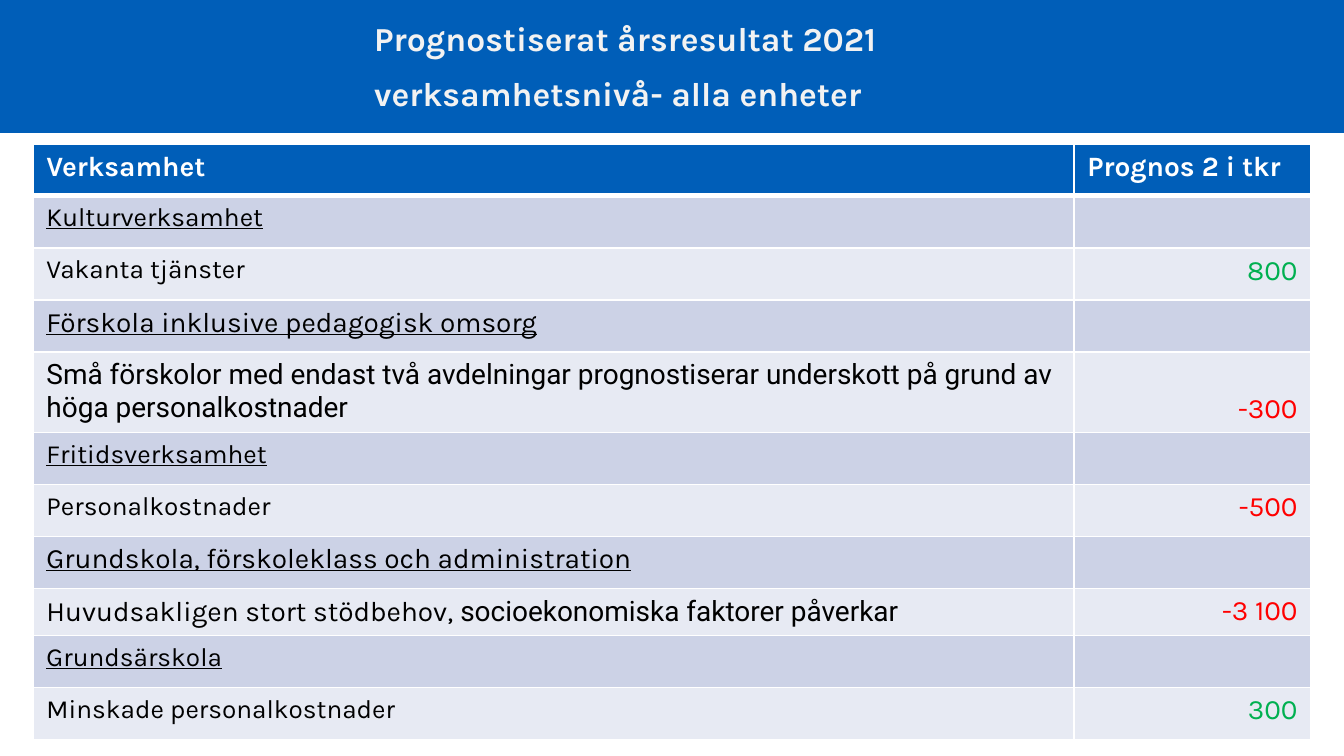
from lxml import etree
from pptx import Presentation
from pptx.dml.color import RGBColor
from pptx.enum.shapes import MSO_SHAPE
from pptx.enum.text import MSO_ANCHOR, PP_ALIGN
from pptx.oxml.ns import qn
from pptx.util import Pt

RECTANGLE = MSO_SHAPE.RECTANGLE
BOTTOM = MSO_ANCHOR.BOTTOM
LEFT, RIGHT = PP_ALIGN.LEFT, PP_ALIGN.RIGHT

EMU_PER_PX = 914400 / 134.4
COLORS = {
    "blue": "005EB8",
    "white": "FFFFFF",
    "title": "F2F2F2",
    "black": "000000",
    "section": "CCD2E6",
    "detail": "E7EAF3",
    "surplus": "00B050",
    "deficit": "FF0000",
}
KARLA, ROBOTO = "Karla", "Roboto"

TITLE = ["Prognostiserat årsresultat 2021", "verksamhetsnivå- alla enheter"]
HEADERS = ["Verksamhet", "Prognos 2 i tkr"]
# Section, its size, detail runs (text, font), detail size, forecast, detail row height
ACTIVITIES = [
    ("Kulturverksamhet", 14, [("Vakanta tjänster", KARLA)], 14, "800", 52),
    ("Förskola inklusive pedagogisk omsorg", 15,
     [("Små förskolor med endast två avdelningar prognostiserar underskott "
       "på grund av höga personalkostnader", ROBOTO)], 15, "-300", 80),
    ("Fritidsverksamhet", 14, [("Personalkostnader", KARLA)], 14, "-500", 52),
    ("Grundskola, förskoleklass och administration", 15,
     [("Huvudsakligen stort stödbehov, ", KARLA),
      ("socioekonomiska faktorer påverkar", ROBOTO)], 15, "-3 100", 47),
    ("Grundsärskola", 14, [("Minskade personalkostnader", KARLA)], 14, "300", 52),
]
COLUMN_WIDTHS = [1041, 237]
ROW_HEIGHT = 52


def px(length):
    return round(length * EMU_PER_PX)


def rgb(color):
    return RGBColor.from_string(COLORS[color])


def style_font(font, size, color, bold=False, underline=False):
    font.size = Pt(size)
    font.bold = bold
    font.underline = underline
    font.color.rgb = rgb(color)


def add_band(slide):
    band = slide.shapes.add_shape(RECTANGLE, 0, 0, px(1344), px(133))
    band.shadow.inherit = False
    band.fill.solid()
    band.fill.fore_color.rgb = rgb("blue")
    band.line.fill.background()


def add_title(slide):
    frame = slide.shapes.add_textbox(px(361), px(16), px(594), px(128)).text_frame
    frame.word_wrap = True
    for index, line in enumerate(TITLE):
        paragraph = frame.add_paragraph() if index else frame.paragraphs[0]
        paragraph.text = line
        paragraph.line_spacing = 0.9
        paragraph.space_before = Pt(10 if index else 0)
        paragraph.font.name = KARLA
        style_font(paragraph.font, 18, "title", bold=True)


def add_borders(cell, top, bottom):
    """Draw white cell edges; top and bottom are widths in points."""
    properties = cell._tc.get_or_add_tcPr()
    for edge, width in (("L", 1), ("R", 1), ("T", top), ("B", bottom)):
        line = etree.SubElement(properties, qn(f"a:ln{edge}"), w=str(Pt(width)))
        fill = etree.SubElement(line, qn("a:solidFill"))
        etree.SubElement(fill, qn("a:srgbClr"), val=COLORS["white"])


def fill_cell(cell, runs, fill, size=15, color="black", bold=False,
              underline=False, align=LEFT, top=1, bottom=1):
    add_borders(cell, top, bottom)
    cell.fill.solid()
    cell.fill.fore_color.rgb = rgb(fill)
    paragraph = cell.text_frame.paragraphs[0]
    paragraph.alignment = align
    style_font(paragraph.font, size, color, bold, underline)
    if not runs:
        cell.margin_top = cell.margin_bottom = 0
    elif len(runs) == 1:
        paragraph.font.name = runs[0][1]
    for text, font_name in runs:
        run = paragraph.add_run()
        run.text = text
        if len(runs) > 1:
            run.font.name = font_name


def add_forecast_table(slide):
    heights = [ROW_HEIGHT]
    for *_, detail_height in ACTIVITIES:
        heights += [ROW_HEIGHT, detail_height]
    table = slide.shapes.add_table(
        len(heights), len(COLUMN_WIDTHS), px(33), px(144),
        px(sum(COLUMN_WIDTHS)), px(sum(heights))).table
    for column, width in zip(table.columns, COLUMN_WIDTHS):
        column.width = px(width)
    for row, height in zip(table.rows, heights):
        row.height = px(height)

    for column, header in enumerate(HEADERS):
        fill_cell(table.cell(0, column), [(header, KARLA)], "blue",
                  color="white", bold=True, bottom=3)
    for index, activity in enumerate(ACTIVITIES):
        section, section_size, detail, detail_size, forecast, _ = activity
        row = 2 * index + 1
        top = 1 if index else 3
        fill_cell(table.cell(row, 0), [(section, KARLA)], "section",
                  section_size, underline=True, top=top)
        fill_cell(table.cell(row, 1), [], "section", top=top)
        fill_cell(table.cell(row + 1, 0), detail, "detail", detail_size)
        forecast_cell = table.cell(row + 1, 1)
        outcome = "deficit" if forecast.startswith("-") else "surplus"
        fill_cell(forecast_cell, [(forecast, KARLA)], "detail",
                  color=outcome, align=RIGHT)
        if heights[row + 1] > ROW_HEIGHT:
            forecast_cell.vertical_anchor = BOTTOM


def main():
    presentation = Presentation()
    presentation.slide_width = px(1344)
    presentation.slide_height = px(756)
    slide = presentation.slides.add_slide(presentation.slide_layouts[6])
    add_band(slide)
    add_title(slide)
    add_forecast_table(slide)
    presentation.save("out.pptx")


if __name__ == "__main__":
    main()
